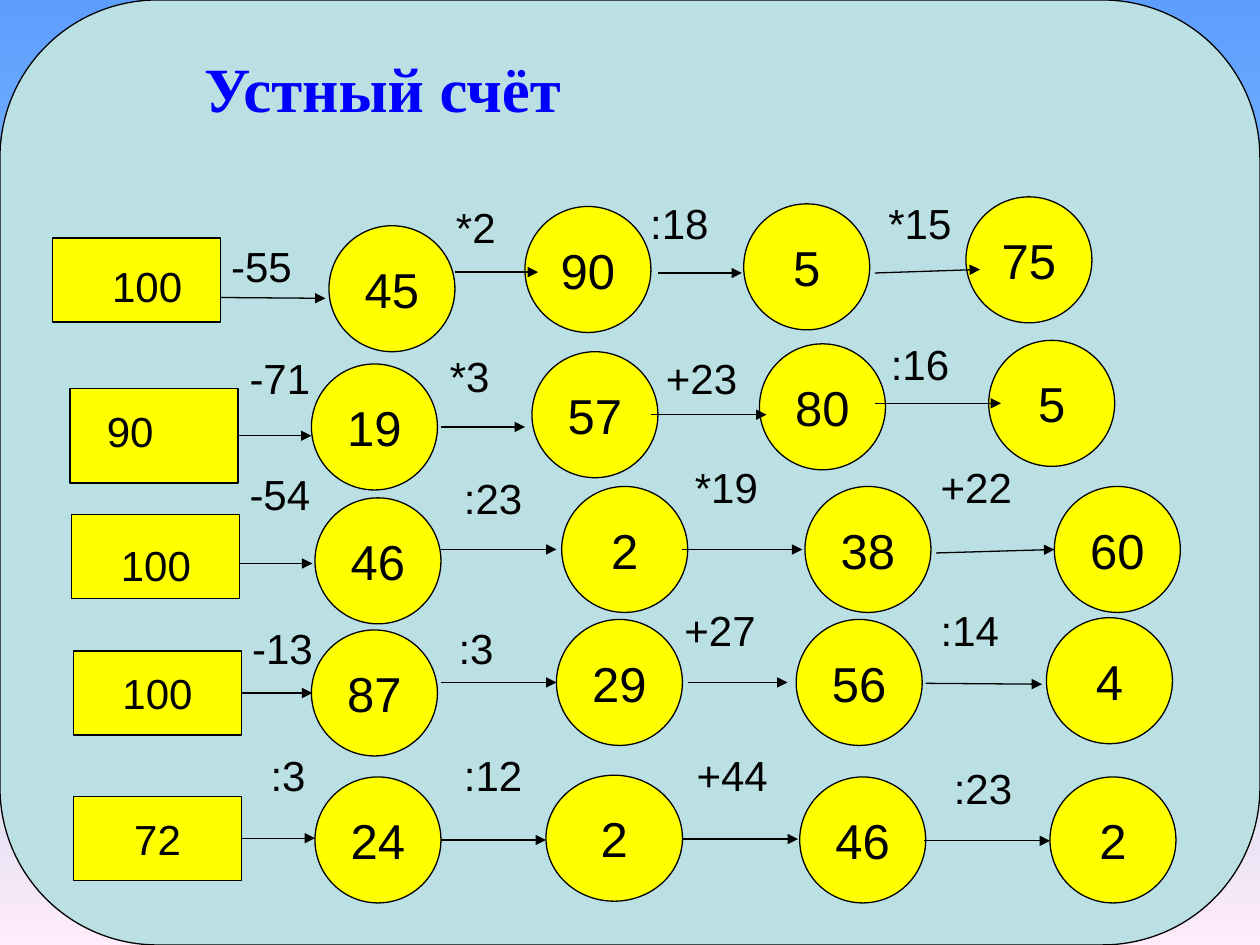
from lxml import etree
from pptx import Presentation
from pptx.dml.color import RGBColor
from pptx.enum.shapes import MSO_CONNECTOR, MSO_SHAPE
from pptx.enum.text import MSO_ANCHOR, MSO_AUTO_SIZE, PP_ALIGN
from pptx.oxml.ns import qn
from pptx.util import Pt

STRAIGHT = MSO_CONNECTOR.STRAIGHT
RECTANGLE, OVAL, ROUNDED = MSO_SHAPE.RECTANGLE, MSO_SHAPE.OVAL, MSO_SHAPE.ROUNDED_RECTANGLE
MIDDLE, CENTER = MSO_ANCHOR.MIDDLE, PP_ALIGN.CENTER
GROW = MSO_AUTO_SIZE.SHAPE_TO_FIT_TEXT
RIGHT_SIDE = 3

WIDTH, HEIGHT = 720, 540
CARD_WIDTH, CARD_HEIGHT, CIRCLE, LABEL_HEIGHT = 96, 48, 72, 36
BLACK, YELLOW, PALE, BLUE = "000000", "FFFF00", "BBE0E3", "0000FF"
SKY = [(0, "5E9EFF"), (40, "85C2FF"), (70, "C4D6EB"), (100, "FFEBFA")]
TITLE = "Устный счёт"

# Start card: number, left, top, height, place of a separate label (left, top, width).
# Step: operation and its (left, top, width), arrow (x1, y1, x2, y2),
# result and its circle (left, top, width).
CHAINS = [
    (("100", 30, 136, CARD_HEIGHT, (57, 145.5, 66)), [
        ("-55", (125, 134, 60), (126, 170, 186, 170.5), "45", (188, 129, CIRCLE)),
        ("*2", (253.5, 111.5, 42), (260, 155.5, 307.5, 155.5), "90", (300, 118, CIRCLE)),
        (":18", (364.5, 109.5, 72), (376, 156, 424, 156), "5", (425, 116.5, CIRCLE)),
        ("*15", (500.5, 109.5, 54), (500, 156, 560, 154), "75", (552, 112.5, CIRCLE)),
    ]),
    (("90", 40, 222, 54, (54, 228, 72)), [
        ("-71", (135.5, 198, 60), (136, 249, 178, 249), "19", (178, 208, CIRCLE)),
        ("*3", (250, 196.5, 54), (252, 244, 300, 244), "57", (304, 201, CIRCLE)),
        ("+23", (373.5, 198, 66), (372, 237, 438, 237), "80", (434, 196.5, CIRCLE)),
        (":16", (502, 190, 72), (500, 230.5, 572, 230.5), "5", (565, 194.5, CIRCLE)),
    ]),
    (("100", 41, 294, CARD_HEIGHT, (62, 305, 82)), [
        ("-54", (135.5, 264, 54), (137, 322, 178.5, 322), "46", (180, 284.5, CIRCLE)),
        (":23", (258, 266.5, 60), (252, 314, 318, 314), "2", (321, 278, CIRCLE)),
        ("*19", (390, 260, 72), (389.5, 314, 458.5, 314), "38", (460, 278, CIRCLE)),
        ("+22", (530.5, 260, 72), (535, 316, 602.5, 314), "60", (602.5, 278, CIRCLE)),
    ]),
    (("100", 42, 372, CARD_HEIGHT, None), [
        ("-13", (137, 352, 79), (138, 396, 178.5, 396), "87", (178, 360, CIRCLE)),
        (":3", (255, 352, 66), (252, 390, 318, 390), "29", (318, 354, CIRCLE)),
        ("+27", (384, 342, 84), (393, 390, 450, 390), "56", (455, 354, CIRCLE)),
        (":14", (530.5, 342, 66), (529, 390.5, 595.5, 391), "4", (598, 353, CIRCLE)),
    ]),
    (("72", 42, 455, CARD_HEIGHT, None), [
        (":3", (147.5, 425, 35), (138, 479, 180, 479), "24", (180, 444, CIRCLE)),
        (":12", (258, 425, 54), (252, 480, 312, 480), "2", (312, 443, 78)),
        ("+44", (391, 425, 66), (390, 479.5, 456, 479.5), "46", (457, 444, CIRCLE)),
        (":23", (538, 432, 64), (528, 480.5, 600, 480.5), "2", (600, 444, CIRCLE)),
    ]),
]


def color(value):
    return RGBColor.from_string(value)


def write(box, text, size, font="Arial", ink=BLACK, bold=False):
    para = box.text_frame.paragraphs[0]
    para.text = text
    span = para.runs[0]
    span.font.size, span.font.name, span.font.bold = Pt(size), font, bold
    span.font.color.rgb = color(ink)
    return para


def add_figure(page, kind, left, top, width, height, fill=YELLOW, text=None, size=28):
    shape = page.shapes.add_shape(kind, Pt(left), Pt(top), Pt(width), Pt(height))
    shape.shadow.inherit = False
    shape.fill.solid()
    shape.fill.fore_color.rgb = color(fill)
    shape.line.color.rgb = color(BLACK)
    shape.line.width = Pt(0.75)
    if text:
        shape.text_frame.word_wrap = False
        shape.text_frame.vertical_anchor = MIDDLE
        write(shape, text, size).alignment = CENTER
    return shape


def add_label(page, text, left, top, width, height=LABEL_HEIGHT, size=24, **style):
    box = page.shapes.add_textbox(Pt(left), Pt(top), Pt(width), Pt(height))
    box.text_frame.word_wrap = True
    box.text_frame.auto_size = GROW
    write(box, text, size, **style)


def add_arrow(page, ends, card):
    arrow = page.shapes.add_connector(STRAIGHT, *[Pt(value) for value in ends])
    arrow.line.color.rgb = color(BLACK)
    arrow.line.width = Pt(0.75)
    etree.SubElement(arrow.line._get_or_add_ln(), qn("a:tailEnd"), type="triangle")
    etree.SubElement(arrow._element.spPr, qn("a:effectLst"))
    # Join arrows that leave the middle of the card's right side
    gap_x = abs(Pt(ends[0]) - card.left - card.width)
    gap_y = abs(Pt(ends[1]) - card.top - card.height // 2)
    if max(gap_x, gap_y) <= Pt(0.5):
        arrow.begin_connect(card, RIGHT_SIDE)


def paint_background(page):
    fill = page.background.fill
    fill.gradient()
    fill.gradient_angle = 270
    stops = page._element.find(".//" + qn("a:gsLst"))
    for stop in list(stops):
        stops.remove(stop)
    for percent, value in SKY:
        stop = etree.SubElement(stops, qn("a:gs"), pos=str(percent * 1000))
        etree.SubElement(stop, qn("a:srgbClr"), val=value)


def main():
    deck = Presentation()
    deck.slide_width, deck.slide_height = Pt(WIDTH), Pt(HEIGHT)
    page = deck.slides.add_slide(deck.slide_layouts[6])

    # Backdrop and title
    paint_background(page)
    add_figure(page, ROUNDED, 0, 0, WIDTH, HEIGHT, PALE)
    add_label(page, TITLE, 109.5, 25, 478, 51, 36,
              font="Times New Roman", ink=BLUE, bold=True)

    # Calculation chains: figures first, then arrows and operations over them
    for (number, left, top, height, place), steps in CHAINS:
        card = add_figure(page, RECTANGLE, left, top, CARD_WIDTH, height,
                          text=None if place else number, size=24)
        if place:
            add_label(page, number, *place)
        for _, _, _, result, (x, y, width) in steps:
            add_figure(page, OVAL, x, y, width, CIRCLE, text=result)
        for operation, spot, ends, _, _ in steps:
            add_arrow(page, ends, card)
            add_label(page, operation, *spot)

    deck.save("out.pptx")


if __name__ == "__main__":
    main()
